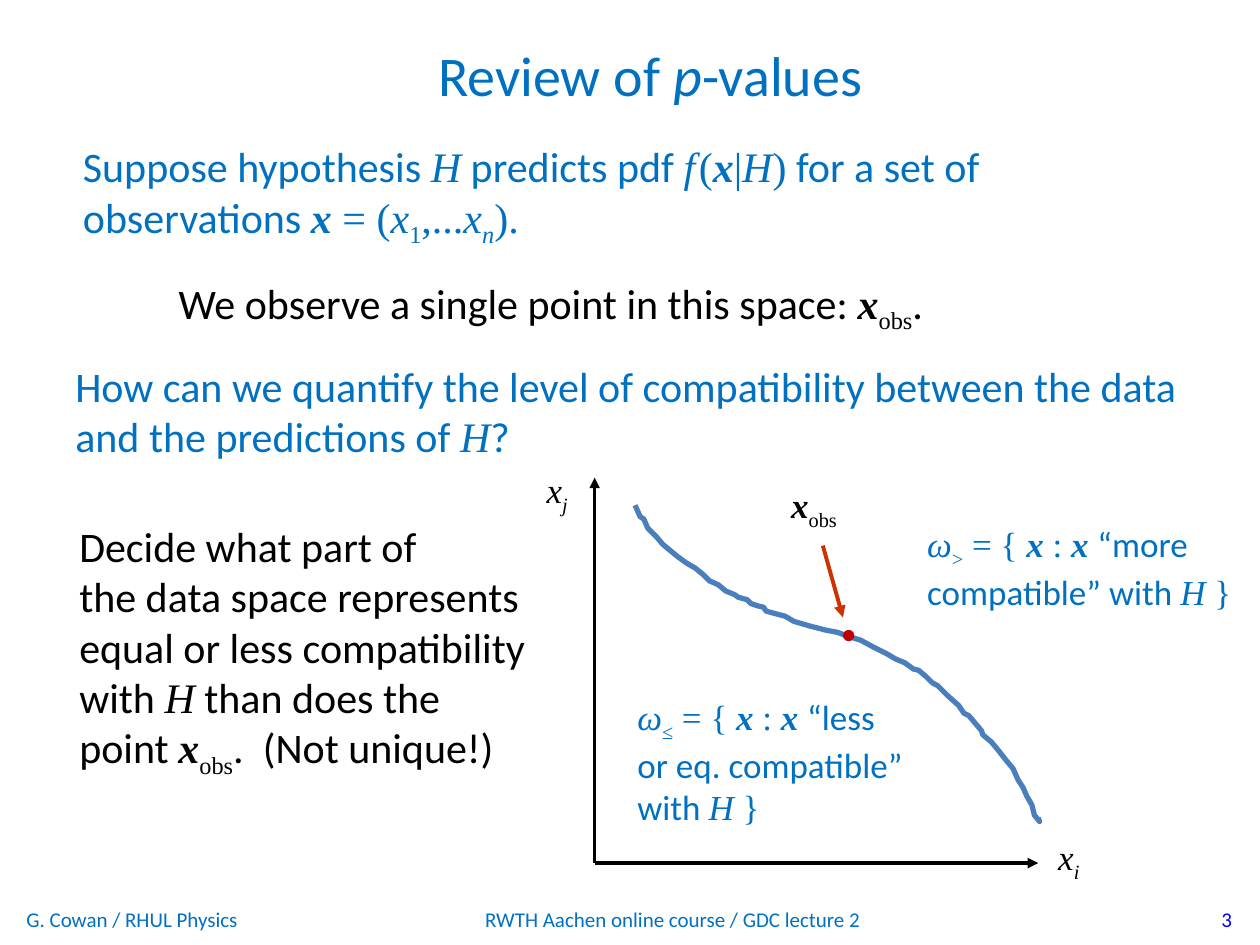
from lxml.etree import SubElement
from pptx import Presentation
from pptx.dml.color import RGBColor
from pptx.enum.shapes import MSO_CONNECTOR, MSO_SHAPE
from pptx.enum.text import MSO_ANCHOR, PP_ALIGN
from pptx.oxml.ns import qn
from pptx.util import Pt


class Theme:
    blue = RGBColor.from_string("0070C0")
    black = RGBColor.from_string("000000")
    page_blue = RGBColor.from_string("0000FF")
    curve = RGBColor.from_string("4B7EBC")
    arrow = RGBColor.from_string("CC3300")
    point = RGBColor.from_string("C00000")
    title_size, body_size, label_size, footer_size, thin_size = 32, 24, 20, 12, 8
    sans, serif = "Calibri", "Times New Roman"
    subscript = "-25000"
    styles = {
        "plain": {"name": sans},
        "slanted": {"name": sans, "italic": True},
        "math": {"name": serif},
        "variable": {"name": serif, "italic": True},
        "vector": {"name": serif, "italic": True, "bold": True},
        "thin": {"name": serif, "size": Pt(thin_size)},
        "sub": {"name": serif},
        "sub_variable": {"name": serif, "italic": True},
    }


class SlideBuilder:
    def __init__(self, slide, theme):
        self.shapes = slide.shapes
        self.theme = theme

    def text(self, box, paragraphs, size, color, align=PP_ALIGN.LEFT, anchor=MSO_ANCHOR.TOP):
        shape = self.shapes.add_textbox(*map(Pt, box))
        frame = shape.text_frame
        frame.word_wrap = True
        frame.vertical_anchor = anchor
        for index, parts in enumerate(paragraphs):
            paragraph = frame.add_paragraph() if index else frame.paragraphs[0]
            paragraph.alignment = align
            for wording, style in parts:
                self.run(paragraph, wording, style, size, color)

    def run(self, paragraph, wording, style, size, color):
        run = paragraph.add_run()
        run.text = wording
        values = {"size": Pt(size), **self.theme.styles[style]}
        for name, value in values.items():
            setattr(run.font, name, value)
        run.font.color.rgb = color
        if style.startswith("sub"):
            run._r.get_or_add_rPr().set("baseline", self.theme.subscript)

    def arrow(self, start, end, color, width):
        connector = self.shapes.add_connector(MSO_CONNECTOR.STRAIGHT, *map(Pt, start + end))
        connector.line.color.rgb = color
        connector.line.width = Pt(width)
        SubElement(connector.line._get_or_add_ln(), qn("a:tailEnd"), type="triangle")
        SubElement(connector._element.spPr, qn("a:effectLst"))

    def dot(self, center, diameter, color):
        left, top = (value - diameter / 2 for value in center)
        shape = self.shapes.add_shape(
            MSO_SHAPE.OVAL, Pt(left), Pt(top), Pt(diameter), Pt(diameter)
        )
        shape.shadow.inherit = False
        shape.fill.solid()
        shape.fill.fore_color.rgb = color
        shape.line.fill.background()

    def curve(self, points, color, width):
        first, *rest = [(Pt(x), Pt(y)) for x, y in points]
        builder = self.shapes.build_freeform(*first)
        builder.add_line_segments(rest, close=False)
        shape = builder.convert_to_shape()
        shape.shadow.inherit = False
        shape.fill.background()
        shape.line.color.rgb = color
        shape.line.width = Pt(width)


BOUNDARY = [
    (362.9, 288.7), (365.8, 295.2), (367.9, 296.6), (370.1, 301.7), (375.1, 306.7),
    (378.7, 311), (383, 314.6), (387.4, 318.2), (392.4, 321.8), (397.4, 324.7),
    (401.8, 328.3), (405.4, 331.9), (410.4, 334.1), (414.7, 337.7), (419.8, 339.8),
    (421.9, 341.3), (427, 342.7), (429.1, 344.9), (433.4, 346.3), (436.3, 347),
    (437.8, 349.2), (442.8, 350.6), (448.6, 352.1), (453.6, 355), (455.8, 355.7),
    (463, 357.8), (471.6, 360), (478.8, 361.4), (484.6, 363.6), (491.8, 365.8),
    (499.7, 370.1), (506.9, 373.7), (511.9, 376.6), (517, 378.7), (522, 382.3),
    (524.9, 383), (529.2, 386.6), (532.8, 390.2), (535.7, 391.7), (541.4, 397.4),
    (547.9, 403.2), (550.8, 407.5), (553.7, 409), (557.3, 413.3), (560.9, 417.6),
    (561.6, 419.8), (566.6, 424.1), (570.2, 428.4), (575.3, 434.9), (578.9, 439.2),
    (581.8, 445.7), (584.6, 450), (586.8, 455), (589.7, 460.1), (591.1, 465.8),
    (594, 469.4), (593.3, 467.3),
]

HYPOTHESIS = ("H", "variable")
OBSERVED = [("x", "vector"), ("obs", "sub")]


def region(relation, opening):
    return [
        ("ω", "variable"), (relation, "sub"), (" = { ", "math"), ("x", "vector"),
        (" : ", "math"), ("x ", "vector"), (opening, "plain"),
    ]


def add_statements(builder, theme):
    builder.text(
        (99.4, 19.4, 544.3, 34),
        [[("Review of ", "plain"), ("p", "slanted"), ("-values", "plain")]],
        theme.title_size, theme.blue, PP_ALIGN.CENTER,
    )
    prediction = [
        [("Suppose hypothesis ", "plain"), HYPOTHESIS, (" predicts pdf ", "plain"),
         ("f", "variable"), (" ", "thin"), ("(", "math"), ("x", "vector"), ("|", "math"),
         HYPOTHESIS, (")", "math"), (" for a set of", "plain")],
        [("observations ", "plain"), ("x", "vector"), (" = (", "math"), ("x", "variable"),
         ("1", "sub"), (",...", "math"), ("x", "variable"), ("n", "sub_variable"),
         (").", "math")],
    ]
    observation = [[("We observe a single point in this space: ", "plain"), *OBSERVED,
                    (".", "plain")]]
    question = [[("How can we quantify the level of compatibility between the data "
                  "and the predictions of ", "plain"), HYPOTHESIS, ("?", "plain")]]
    decision = [
        [("Decide what part of", "plain")],
        [("the data space represents equal or less compatibility with ", "plain"),
         HYPOTHESIS, (" than does the point ", "plain"), *OBSERVED,
         (".  (Not unique!)", "plain")],
    ]
    for box, paragraphs, color in (
        ((40.3, 77, 550, 65.5), prediction, theme.blue),
        ((95, 154.8, 460, 36), observation, theme.black),
        ((36, 202.3, 667.5, 65.5), question, theme.blue),
        ((38.2, 293.8, 275, 152.6), decision, theme.black),
    ):
        builder.text(box, paragraphs, theme.body_size, color)


def add_diagram(builder, theme):
    builder.curve(BOUNDARY, theme.curve, 3)
    less = [region("≤", "“less"), [("or eq. compatible”", "plain")],
            [("with ", "plain"), HYPOTHESIS, (" }", "math")]]
    more = [region(">", "“more"),
            [("compatible” with ", "plain"), HYPOTHESIS, (" }", "math")]]
    for box, paragraphs, color in (
        ((357.1, 393.8, 207.4, 80), less, theme.blue),
        ((522.7, 295.2, 195, 55.4), more, theme.blue),
        ((445, 272.9, 50, 31.7), [OBSERVED], theme.black),
        ((597.6, 473.8, 32, 31.7), [[("x", "variable"), ("i", "sub_variable")]], theme.black),
        ((305.3, 264.2, 32, 31.7), [[("x", "variable"), ("j", "sub_variable")]], theme.black),
    ):
        builder.text(box, paragraphs, theme.label_size, color)
    origin = (339.8, 493.2)
    builder.arrow((470.2, 311.8), (481.7, 352.8), theme.arrow, 2.25)
    builder.arrow(origin, (593.3, 493.2), theme.black, 2)
    builder.arrow(origin, (339.8, 272.9), theme.black, 2)
    builder.dot((484.9, 363.2), 6.5, theme.point)


def add_footer(builder, theme):
    for left, width, wording, color, align in (
        (8, 168, "G. Cowan / RHUL Physics", theme.blue, PP_ALIGN.LEFT),
        (162.7, 443.5, "RWTH Aachen online course / GDC lecture 2", theme.blue, PP_ALIGN.CENTER),
        (543, 168, "3", theme.page_blue, PP_ALIGN.RIGHT),
    ):
        builder.text((left, 510.5, width, 29), [[(wording, "plain")]],
                     theme.footer_size, color, align, MSO_ANCHOR.MIDDLE)


def main():
    presentation = Presentation()
    presentation.slide_width, presentation.slide_height = Pt(720), Pt(540)
    slide = presentation.slides.add_slide(presentation.slide_layouts[6])
    theme = Theme()
    builder = SlideBuilder(slide, theme)
    add_statements(builder, theme)
    add_diagram(builder, theme)
    add_footer(builder, theme)
    presentation.save("out.pptx")


if __name__ == "__main__":
    main()
